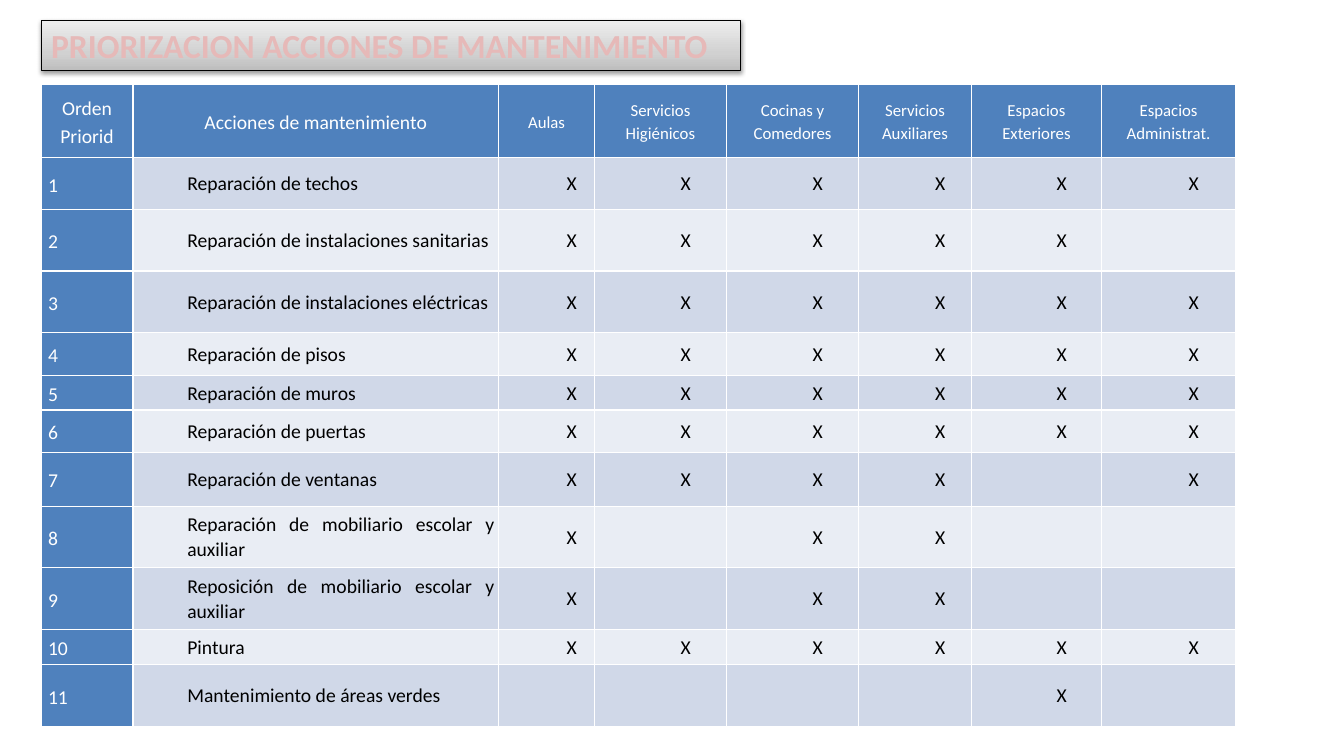
from lxml import etree
from pptx import Presentation
from pptx import util as u
from pptx.dml.color import RGBColor
from pptx.enum import shapes, text

# Content
TITLE = "PRIORIZACION ACCIONES DE MANTENIMIENTO"
HEADS = ["Orden Priorid", "Acciones de mantenimiento", "Aulas",
         "Servicios Higiénicos", "Cocinas y Comedores",
         "Servicios Auxiliares", "Espacios Exteriores",
         "Espacios Administrat."]
# Task, one mark per area, row height in cm
TASKS = [
    ("Reparación de techos", "XXXXXX", 1.31),
    ("Reparación de instalaciones sanitarias", "XXXXX-", 1.55),
    ("Reparación de instalaciones eléctricas", "XXXXXX", 1.55),
    ("Reparación de pisos", "XXXXXX", 1.09),
    ("Reparación de muros", "XXXXXX", 0.86),
    ("Reparación de puertas", "XXXXXX", 1.07),
    ("Reparación de ventanas", "XXXX-X", 1.36),
    ("Reparación de mobiliario escolar y auxiliar", "X-XX--", 1.55),
    ("Reposición de mobiliario escolar y auxiliar", "X-XX--", 1.55),
    ("Pintura", "XXXXXX", 0.89),
    ("Mantenimiento de áreas verdes", "----X-", 1.55),
]
WIDTHS = [2.31, 9.22, 2.41, 3.33, 3.33, 2.84, 3.28, 3.38]
HEAD_H = 1.85
LEFT = 1.04
COLORS = {"blue": "4F81BD", "odd": "D0D8E8", "even": "E9EDF4",
          "white": "FFFFFF", "black": "000000",
          "pink": "E6B9B8", "red": "C0504D"}
GRAYS = [(0, "BDBDBD"), (35, "D1D1D1"), (100, "EEEEEE")]
ALIGN = text.PP_ALIGN
NS = 'xmlns:a="http://schemas.openxmlformats.org/drawingml/2006/main"'


def rgb(name):
    return RGBColor.from_string(COLORS[name])


def style(item, **vals):
    for key, val in vals.items():
        setattr(item, key, val)


def write(para, words, size, color, bold=False):
    run = para.add_run()
    run.text = words
    style(run.font, name="Calibri", size=u.Pt(size), bold=bold)
    run.font.color.rgb = rgb(color)
    return run


def fill_cell(cell, words, size, fill, color, align, body):
    cell.fill.solid()
    cell.fill.fore_color.rgb = rgb(fill)
    if not words:
        return
    side = u.Cm(0.1 if body else 0.17)
    style(cell, margin_left=side, margin_right=side, margin_top=0,
          margin_bottom=0, vertical_anchor=text.MSO_ANCHOR.MIDDLE)
    para = cell.text_frame.paragraphs[0]
    style(para, alignment=align, line_spacing=1.05 if body else 1.15)
    if body:
        para.space_after = u.Pt(6)
        para._p.get_or_add_pPr().set("marL", str(u.Cm(1.27)))
    write(para, words, size, color)


deck = Presentation()
style(deck, slide_width=u.Cm(33.87), slide_height=u.Cm(19.05))
slide = deck.slides.add_slide(deck.slide_layouts[6])

# Title bar
bar = slide.shapes.add_shape(shapes.MSO_SHAPE.RECTANGLE, u.Cm(LEFT),
                             u.Cm(0.51), u.Cm(17.63), u.Cm(1.28))
bar.line.color.rgb = rgb("black")
bar.line.width = u.Pt(0.75)
bar.fill.gradient()
bar.fill.gradient_angle = 90
stops = bar._element.spPr.find(".//{*}gsLst")
for stop in list(stops):
    stops.remove(stop)
for pos, gray in GRAYS:
    stops.append(etree.fromstring(
        f'<a:gs {NS} pos="{pos * 1000}"><a:srgbClr val="{gray}"/></a:gs>'))
bar._element.spPr.append(etree.fromstring(
    f'<a:effectLst {NS}><a:outerShdw blurRad="{u.Pt(3.1)}" '
    f'dist="{u.Pt(1.6)}" dir="5400000" rotWithShape="0">'
    f'<a:srgbClr val="{COLORS["black"]}"><a:alpha val="38000"/></a:srgbClr>'
    '</a:outerShdw></a:effectLst>'))
frame = bar.text_frame
style(frame, word_wrap=True, auto_size=text.MSO_AUTO_SIZE.SHAPE_TO_FIT_TEXT,
      vertical_anchor=text.MSO_ANCHOR.TOP)
head = frame.paragraphs[0]
head.alignment = ALIGN.LEFT
run = write(head, TITLE, 24, "pink", True)
run._r.get_or_add_rPr().insert(0, etree.fromstring(
    f'<a:ln {NS} w="{u.Pt(1.75)}"><a:solidFill>'
    f'<a:srgbClr val="{COLORS["red"]}"/></a:solidFill></a:ln>'))

# Priority table
highs = [HEAD_H] + [high for _, _, high in TASKS]
grid = slide.shapes.add_table(len(highs), len(WIDTHS), u.Cm(LEFT), u.Cm(2.12),
                              u.Cm(sum(WIDTHS)), u.Cm(sum(highs))).table
for col, wide in zip(grid.columns, WIDTHS):
    col.width = u.Cm(wide)
for row, high in zip(grid.rows, highs):
    row.height = u.Cm(high)

# Header row
for c, words in enumerate(HEADS):
    fill_cell(grid.cell(0, c), words, 14 if c < 2 else 12, "blue", "white",
              ALIGN.CENTER, False)

# Task rows
for r, (task, marks, _) in enumerate(TASKS, 1):
    band = "odd" if r % 2 else "even"
    fill_cell(grid.cell(r, 0), str(r), 14, "blue", "white",
              ALIGN.JUSTIFY, False)
    side = ALIGN.JUSTIFY if "mobiliario" in task else ALIGN.LEFT
    fill_cell(grid.cell(r, 1), task, 14, band, "black", side, True)
    for c, mark in enumerate(marks, 2):
        fill_cell(grid.cell(r, c), mark.strip("-"), 14, band, "black",
                  ALIGN.CENTER, True)

deck.save("out.pptx")
